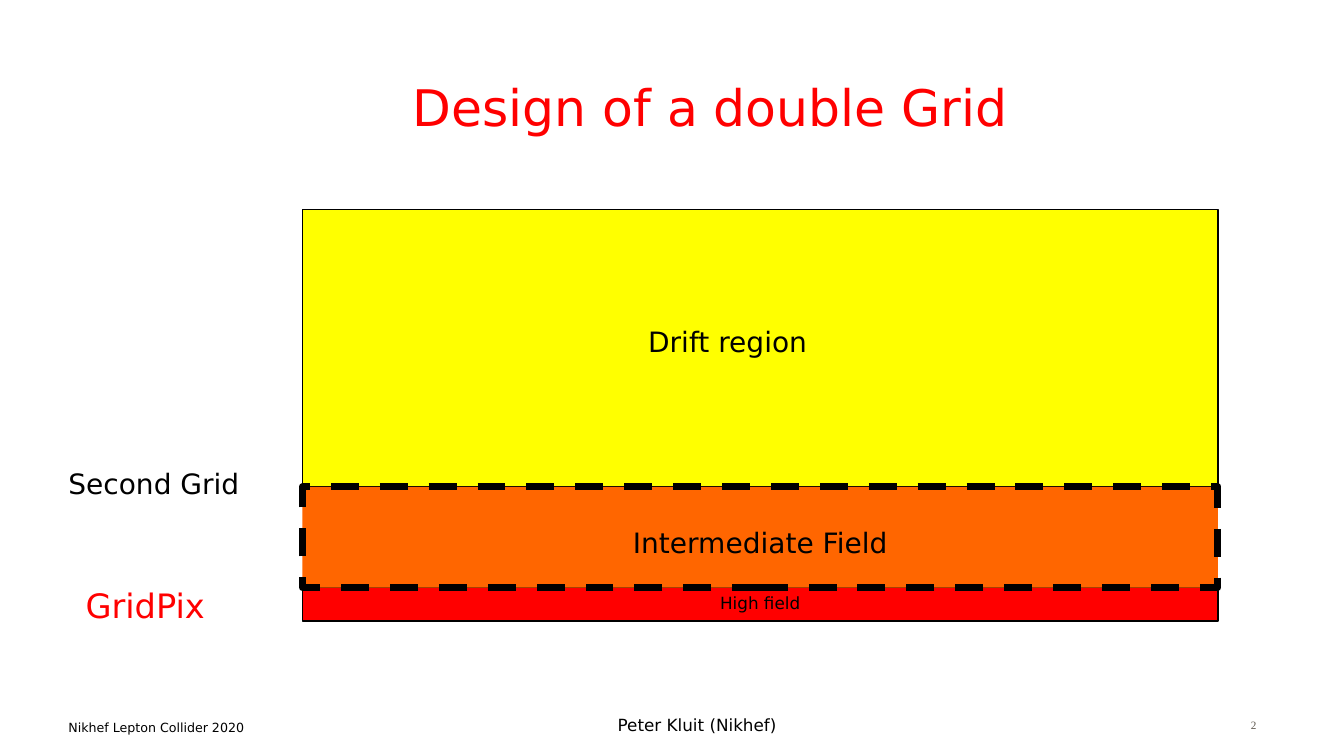
from pptx import Presentation
from pptx.dml.color import RGBColor
from pptx.enum.dml import MSO_LINE
from pptx.enum.shapes import MSO_SHAPE
from pptx.enum.text import MSO_ANCHOR, MSO_AUTO_SIZE, PP_ALIGN
from pptx.util import Inches, Pt

BLACK = RGBColor(0x00, 0x00, 0x00)
RED = RGBColor(0xFF, 0x00, 0x00)
YELLOW = RGBColor(0xFF, 0xFF, 0x00)
ORANGE = RGBColor(0xFF, 0x66, 0x00)
GREY = RGBColor(0x5E, 0x57, 0x4E)
SANS, SERIF = "DejaVu Sans", "Times New Roman"
LEFT, CENTER, RIGHT = PP_ALIGN.LEFT, PP_ALIGN.CENTER, PP_ALIGN.RIGHT
TOP, BOTTOM = MSO_ANCHOR.TOP, MSO_ANCHOR.BOTTOM

TITLE = ("Design of a double Grid ", (2, 0.71, 10.25, 0.71))
STACK_LEFT, STACK_TOP, STACK_WIDTH = 3, 2.08, 9.08
DRIFT = {"height": 2.75, "fill": YELLOW, "line": 1}
INTERMEDIATE = {"height": 1, "fill": ORANGE, "line": 5, "dash": MSO_LINE.DASH,
                "text": "Intermediate Field", "size": 20, "inset": 0.38}
HIGH_FIELD = {"height": 0.33, "fill": RED, "line": 1,
              "text": "High field", "size": 12, "inset": 0.05}
LAYERS = [DRIFT, INTERMEDIATE, HIGH_FIELD]
DRAWING_ORDER = [DRIFT, HIGH_FIELD, INTERMEDIATE]
LABELS = [
    ("GridPix", (0.75, 5.75, 2.25, 0.5), 24, RED, SANS, LEFT, TOP),
    ("Drift region", (6.33, 3.17, 2.08, 0.44), 20, BLACK, SANS, LEFT, TOP),
    ("Second Grid", (0.58, 4.58, 2.08, 0.44), 20, BLACK, SANS, LEFT, TOP),
    ("Nikhef Lepton Collider 2020", (0.58, 7.07, 5.37, 0.27), 9, BLACK, SANS, LEFT, BOTTOM),
    ("Peter Kluit (Nikhef)", (4.75, 6.9, 4.33, 0.44), 12, BLACK, SANS, CENTER, BOTTOM),
    ("2", (9.78, 6.81, 2.78, 0.5), 8, GREY, SERIF, RIGHT, BOTTOM),
]


def set_all(target, values):
    for name, value in values.items():
        setattr(target, name, value)


def write(shape, text, size, color, font=SANS, align=CENTER, anchor=TOP, inset=0.05):
    frame = shape.text_frame
    set_all(frame, {"word_wrap": True, "auto_size": MSO_AUTO_SIZE.NONE,
                    "vertical_anchor": anchor, "margin_top": Inches(inset),
                    "margin_bottom": Inches(0.05)})
    paragraph = frame.paragraphs[0]
    set_all(paragraph, {"text": text, "alignment": align, "line_spacing": 1.0})
    set_all(paragraph.font, {"size": Pt(size), "name": font, "bold": False})
    paragraph.font.color.rgb = color


def add_layer(slide, layer, top):
    shape = slide.shapes.add_shape(
        MSO_SHAPE.RECTANGLE, Inches(STACK_LEFT), Inches(top),
        Inches(STACK_WIDTH), Inches(layer["height"]))
    shape.shadow.inherit = False
    shape.fill.solid()
    shape.fill.fore_color.rgb = layer["fill"]
    shape.line.color.rgb = BLACK
    set_all(shape.line, {"width": Pt(layer["line"]),
                         "dash_style": layer.get("dash", MSO_LINE.SOLID)})
    if "text" in layer:
        write(shape, layer["text"], layer["size"], BLACK, inset=layer["inset"])


def main():
    presentation = Presentation()
    set_all(presentation, {"slide_width": Inches(13.33), "slide_height": Inches(7.5)})
    slide = presentation.slides.add_slide(presentation.slide_layouts[5])

    title_text, title_box = TITLE
    title = slide.shapes.title
    set_all(title, dict(zip(("left", "top", "width", "height"), map(Inches, title_box))))
    write(title, title_text, 36, RED)

    for layer in DRAWING_ORDER:
        above = LAYERS[:LAYERS.index(layer)]
        add_layer(slide, layer, STACK_TOP + sum(upper["height"] for upper in above))

    for text, box, *style in LABELS:
        write(slide.shapes.add_textbox(*map(Inches, box)), text, *style)

    presentation.save("out.pptx")


if __name__ == "__main__":
    main()
